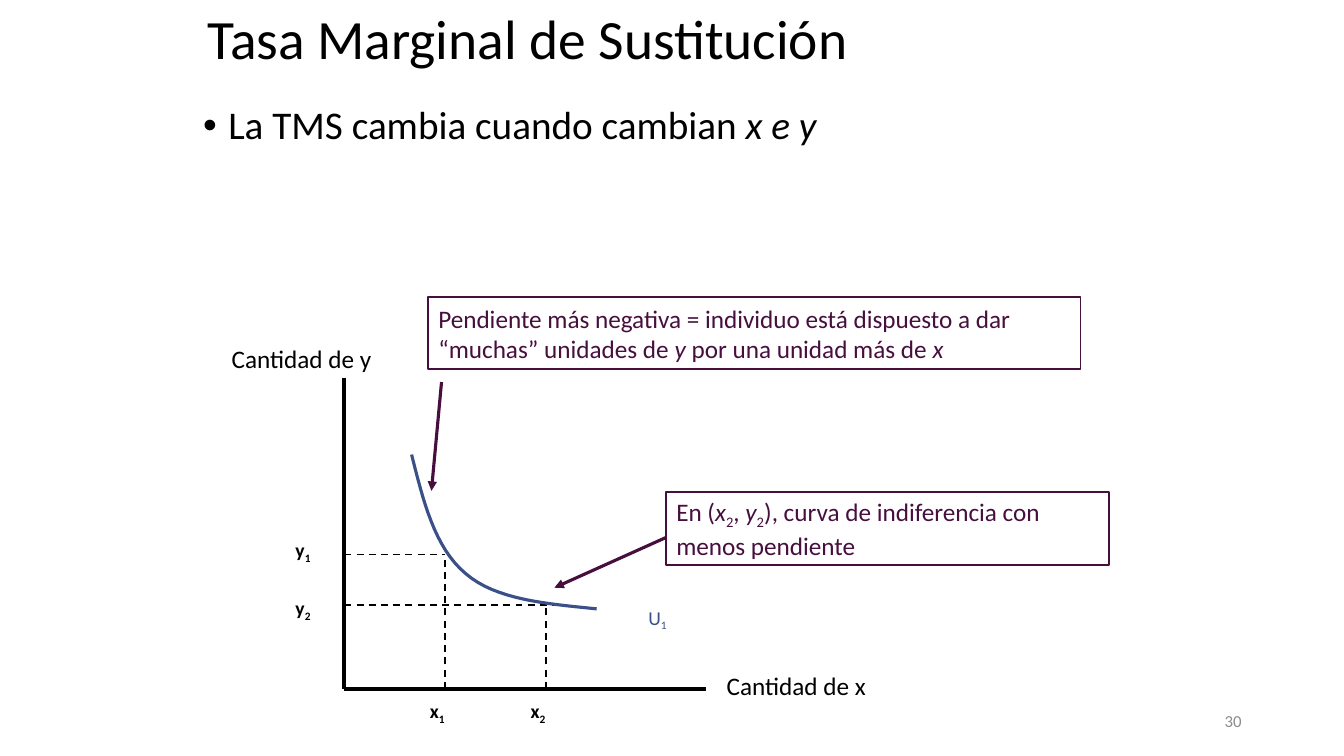
"""Build a slide on the marginal rate of substitution with an indifference curve."""
import dataclasses

import lxml.etree
import pptx
import pptx.dml.color
import pptx.enum.dml
import pptx.enum.shapes
import pptx.enum.text
import pptx.oxml.ns
import pptx.util

Pt = pptx.util.Pt
RGB = pptx.dml.color.RGBColor.from_string
qn = pptx.oxml.ns.qn
Align = pptx.enum.text.PP_ALIGN
Anchor = pptx.enum.text.MSO_ANCHOR
Fit = pptx.enum.text.MSO_AUTO_SIZE
LINK = pptx.enum.shapes.MSO_CONNECTOR.STRAIGHT
RECT = pptx.enum.shapes.MSO_SHAPE.RECTANGLE
DASH = pptx.enum.dml.MSO_LINE.DASH


@dataclasses.dataclass(frozen=True)
class Theme:
    font: str = "Calibri"
    black: str = "000000"
    blue: str = "3B4F89"
    plum: str = "470F3E"
    gray: str = "8C8C8C"
    title: float = 39.6
    body: float = 28
    note: float = 18
    label: float = 14
    small: float = 12
    thick: float = 3
    mid: float = 2.25
    thin: float = 1.25


theme = Theme()


def write(shape, runs, size, color, bold=False, align=Align.LEFT,
          anchor=Anchor.MIDDLE, fit=Fit.SHAPE_TO_FIT_TEXT):
    frame = shape.text_frame
    look = {"word_wrap": True, "auto_size": fit, "vertical_anchor": anchor}
    for key, value in look.items():
        setattr(frame, key, value)
    para = frame.paragraphs[0]
    para.alignment = align
    for text, style in runs:
        run = para.add_run()
        run.text = text
        face = {"name": theme.font, "size": Pt(size), "bold": bold, "italic": style == "i"}
        for key, value in face.items():
            setattr(run.font, key, value)
        run.font.color.rgb = RGB(color)
        if style == "sub":
            run.font._element.set("baseline", "-25000")
    return para


def draw(shapes, ends, color, width, dash=None, arrow=False):
    link = shapes.add_connector(LINK, *map(Pt, ends))
    link.line.color.rgb = RGB(color)
    link.line.width = Pt(width)
    link.line.dash_style = dash
    spot = link._element.spPr
    if arrow:
        lxml.etree.SubElement(spot.find(qn("a:ln")), qn("a:tailEnd"), type="triangle")
    lxml.etree.SubElement(spot, qn("a:effectLst"))


deck = pptx.Presentation()
deck.slide_width, deck.slide_height = Pt(960), Pt(540)
slide = deck.slides.add_slide(deck.slide_layouts[5])
shapes = slide.shapes

title = shapes.title
place = {"left": 141, "top": 12, "width": 672, "height": 36}
for key, value in place.items():
    setattr(title, key, Pt(value))
para = write(title, [("Tasa Marginal de Sustitución", "")],
             theme.title, theme.black, fit=Fit.NONE)
para.line_spacing = 0.9

body = shapes.add_textbox(Pt(138), Pt(72), Pt(666), Pt(58))
para = write(body, [("La TMS cambia cuando cambian ", ""), ("x e y", "i")],
             theme.body, theme.black, anchor=Anchor.TOP, fit=Fit.NONE)
para.line_spacing = 0.9
para.space_before = Pt(10)
props = para._p.get_or_add_pPr()
props.set("marL", str(Pt(18)))
props.set("indent", str(Pt(-18)))
lxml.etree.SubElement(props, qn("a:buFont"), typeface="Arial")
lxml.etree.SubElement(props, qn("a:buChar"), char="•")

number = shapes.add_textbox(Pt(678), Pt(500), Pt(216), Pt(29))
write(number, [("30", "")], theme.small, theme.gray, align=Align.RIGHT, fit=Fit.NONE)

left, base = 246, 492
draw(shapes, (left, 270, left, base), theme.black, theme.thick)
draw(shapes, (left, base, 504, base), theme.black, theme.thick)
for x, y, end in ((318, 396, 318), (390, 432, 396)):
    draw(shapes, (x, base, x, y), theme.black, theme.thin, DASH)
    draw(shapes, (left, y, end, y), theme.black, theme.thin, DASH)

for text, x, y in (("Cantidad de x", 512, 475), ("Cantidad de y", 158.4, 241.2)):
    box = shapes.add_textbox(Pt(x), Pt(y), Pt(125), Pt(29))
    write(box, [(text, "")], theme.note, theme.black)

labels = (
    ("x", "1", 300, 497, theme.black),
    ("x", "2", 372, 497, theme.black),
    ("y", "1", 204, 381.6, theme.black),
    ("y", "2", 204, 423.4, theme.black),
    ("U", "1", 456, 430, theme.blue),
)
for name, sub, x, y, color in labels:
    box = shapes.add_textbox(Pt(x), Pt(y), Pt(42), Pt(24))
    write(box, [(name, ""), (sub, "sub")], theme.label, color, bold=color == theme.black)

bends = (
    ((294, 324.7), (302.4, 357.8), (310.3, 391), (332.6, 409.7)),
    ((332.6, 409.7), (354.2, 428.4), (390.2, 431.3), (426.2, 434.9)),
)
steps = 16
dots = []
for bend in bends:
    for step in range(1, steps + 1):
        t = step / steps
        parts = ((1 - t) ** 3, 3 * t * (1 - t) ** 2, 3 * t * t * (1 - t), t ** 3)
        dots.append([Pt(sum(p * q for p, q in zip(parts, axis))) for axis in zip(*bend)])
pen = shapes.build_freeform(*map(Pt, bends[0][0]))
pen.add_line_segments(dots, close=False)
curve = pen.convert_to_shape()
curve.shadow.inherit = False
curve.fill.background()
curve.line.color.rgb = RGB(theme.blue)
curve.line.width = Pt(theme.mid)

notes = (
    ((306, 212.4, 465.8, 51), (315.4, 272.9, 308.2, 350.6),
     [("Pendiente más negativa = individuo está dispuesto a dar “muchas” unidades de ", ""),
      ("y ", "i"), ("por una unidad más de ", ""), ("x", "i")]),
    ((476, 351.4, 316, 52), (476, 383.8, 396, 419.8),
     [("En (", ""), ("x", "i"), ("2", "sub"), (", ", ""), ("y", "i"), ("2", "sub"),
      ("), curva de indiferencia con menos pendiente", "")]),
)
for area, ends, runs in notes:
    group = shapes.add_group_shape().shapes
    box = group.add_shape(RECT, *map(Pt, area))
    box.shadow.inherit = False
    box.fill.background()
    box.line.color.rgb = RGB(theme.plum)
    box.line.width = Pt(theme.thin)
    write(box, runs, theme.note, theme.plum)
    draw(group, ends, theme.plum, theme.mid, arrow=True)

deck.save("out.pptx")
